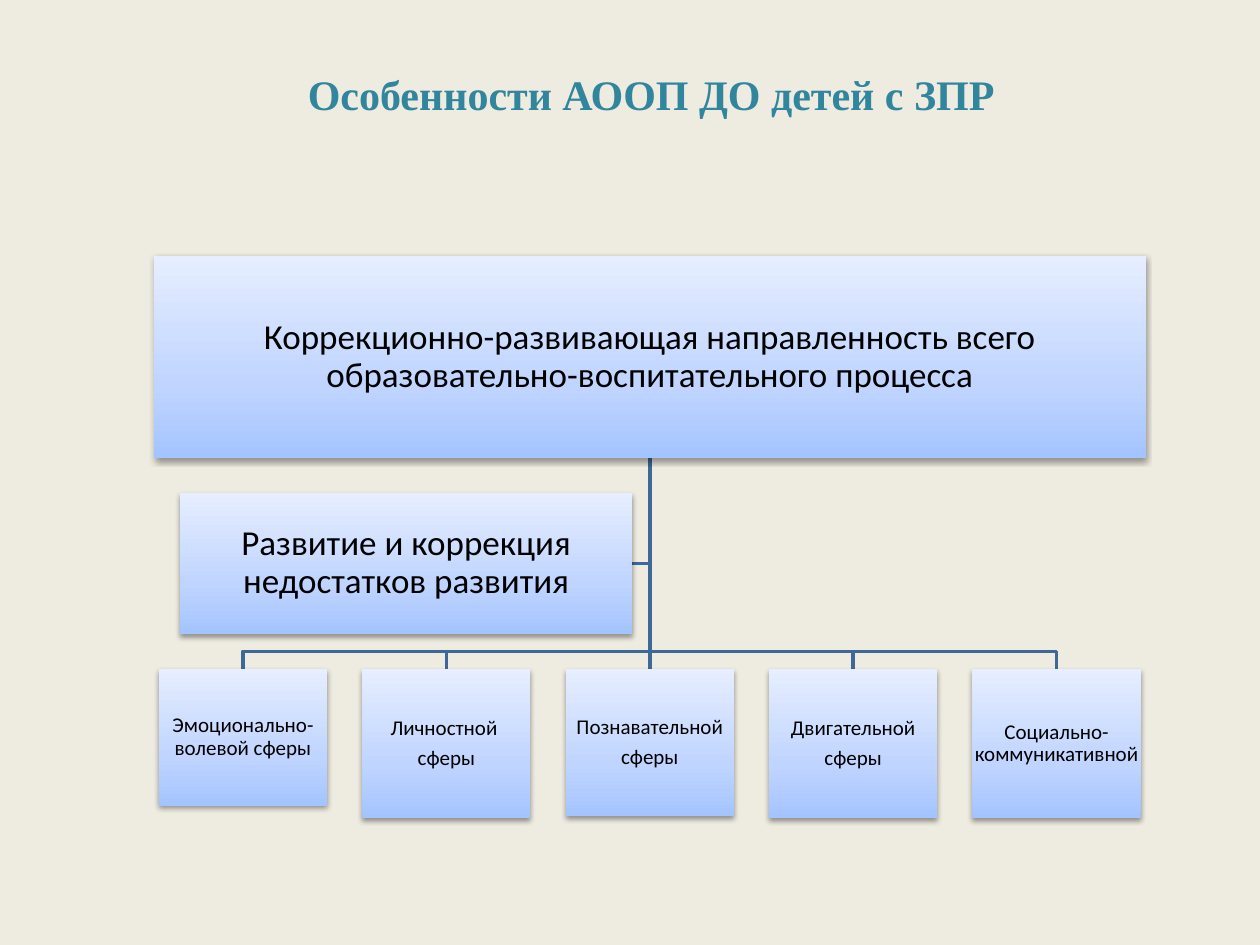
from pptx import Presentation
from pptx.dml.color import RGBColor
from pptx.enum.shapes import MSO_CONNECTOR, MSO_SHAPE
from pptx.enum.text import MSO_ANCHOR, PP_ALIGN
from pptx.oxml import parse_xml
from pptx.oxml.ns import nsdecls, qn
from pptx.util import Cm, Pt

TITLE = "Особенности АООП ДО детей с ЗПР"
GOAL = ["Коррекционно-развивающая направленность всего "
        "образовательно-воспитательного процесса"]
ASSISTANT = ["Развитие и коррекция недостатков развития"]
SPHERES = [  # paragraphs, box height in cm
    (["Эмоционально-волевой сферы"], 2.75),
    (["Личностной ", "сферы"], 3),
    (["Познавательной", "сферы"], 2.97),
    (["Двигательной", "сферы"], 3),
    (["Социально-коммуникативной"], 3),
]
GRADIENT = [(0, "A4C4FF"), (35, "BFD4FF"), (100, "E6EEFF")]
LINE = "3F6797"

# Layout in centimetres
CENTER = 13.1
GOAL_TOP, GOAL_W, GOAL_H = 5.16, 20, 4.07
GOAL_BOTTOM = GOAL_TOP + GOAL_H
SIDE_LEFT, SIDE_TOP, SIDE_W, SIDE_H = 3.63, 9.94, 9.12, 2.84
SPHERE_TOP, SPHERE_W, STEP = 13.49, 3.39, 4.1
BUS_Y = 13.13


def rgb(color):
    return RGBColor.from_string(color)


def write(tf, paragraphs, size, font, color, bold=False):
    tf.word_wrap = True
    tf.vertical_anchor = MSO_ANCHOR.MIDDLE
    for i, text in enumerate(paragraphs):
        p = tf.paragraphs[0] if i == 0 else tf.add_paragraph()
        p.text = text
        p.alignment = PP_ALIGN.CENTER
        p.font.size = Pt(size)
        p.font.name = font
        p.font.bold = bold
        p.font.color.rgb = rgb(color)


def add_box(s, left, top, width, height, paragraphs, size):
    """Add a gradient box with a soft shadow and centred text."""
    sp = s.shapes.add_shape(MSO_SHAPE.RECTANGLE, Cm(left), Cm(top), Cm(width), Cm(height))
    sp.line.fill.background()
    sp.shadow.inherit = False
    props = sp._element.spPr
    stops = "".join(f'<a:gs pos="{pos * 1000}"><a:srgbClr val="{color}"/></a:gs>'
                    for pos, color in GRADIENT)
    props.insert(2, parse_xml(
        f'<a:gradFill {nsdecls("a")} rotWithShape="1"><a:gsLst>{stops}</a:gsLst>'
        '<a:lin ang="16200000" scaled="0"/></a:gradFill>'))
    props.find(qn("a:effectLst")).append(parse_xml(
        f'<a:outerShdw {nsdecls("a")} blurRad="40000" dist="20000" dir="5400000" '
        'rotWithShape="0"><a:srgbClr val="000000"><a:alpha val="38000"/>'
        '</a:srgbClr></a:outerShdw>'))
    tf = sp.text_frame
    tf.margin_left = tf.margin_right = tf.margin_top = tf.margin_bottom = Cm(0.03)
    write(tf, paragraphs, size, "Calibri", "000000")
    for p in tf.paragraphs:
        p.line_spacing = 0.9
        p.space_after = Pt(0.35 * size)


def add_link(s, points):
    """Join points by a line: a connector for two, an open outline for more."""
    (x, y), *rest = [(Cm(px), Cm(py)) for px, py in points]
    if len(rest) == 1:
        sp = s.shapes.add_connector(MSO_CONNECTOR.STRAIGHT, x, y, *rest[0])
        sp._element.spPr.append(parse_xml(f'<a:effectLst {nsdecls("a")}/>'))
    else:
        builder = s.shapes.build_freeform(x, y)
        builder.add_line_segments(rest, close=False)
        sp = builder.convert_to_shape()
        sp.fill.background()
        sp.shadow.inherit = False
    sp.line.color.rgb = rgb(LINE)
    sp.line.width = Pt(2)


prs = Presentation()
prs.slide_width, prs.slide_height = Cm(25.4), Cm(19.05)
s = prs.slides.add_slide(prs.slide_layouts[6])
s.background.fill.solid()
s.background.fill.fore_color.rgb = rgb("EEECE1")

title = s.shapes.add_textbox(Cm(1.7), Cm(1), Cm(22.86), Cm(1.78))
write(title.text_frame, [TITLE], 24, "Times New Roman", "31859C", bold=True)

start = (CENTER, GOAL_BOTTOM)
side_y = SIDE_TOP + SIDE_H / 2
add_link(s, [start, (CENTER, side_y), (SIDE_LEFT + SIDE_W, side_y)])
centers = [CENTER + (i - len(SPHERES) // 2) * STEP for i in range(len(SPHERES))]
for x in centers:
    bend = [] if x == CENTER else [(CENTER, BUS_Y), (x, BUS_Y)]
    add_link(s, [start, *bend, (x, SPHERE_TOP)])

add_box(s, CENTER - GOAL_W / 2, GOAL_TOP, GOAL_W, GOAL_H, GOAL, 20)
for x, (paragraphs, height) in zip(centers, SPHERES):
    add_box(s, x - SPHERE_W / 2, SPHERE_TOP, SPHERE_W, height, paragraphs, 12)
add_box(s, SIDE_LEFT, SIDE_TOP, SIDE_W, SIDE_H, ASSISTANT, 20)

prs.save("out.pptx")
